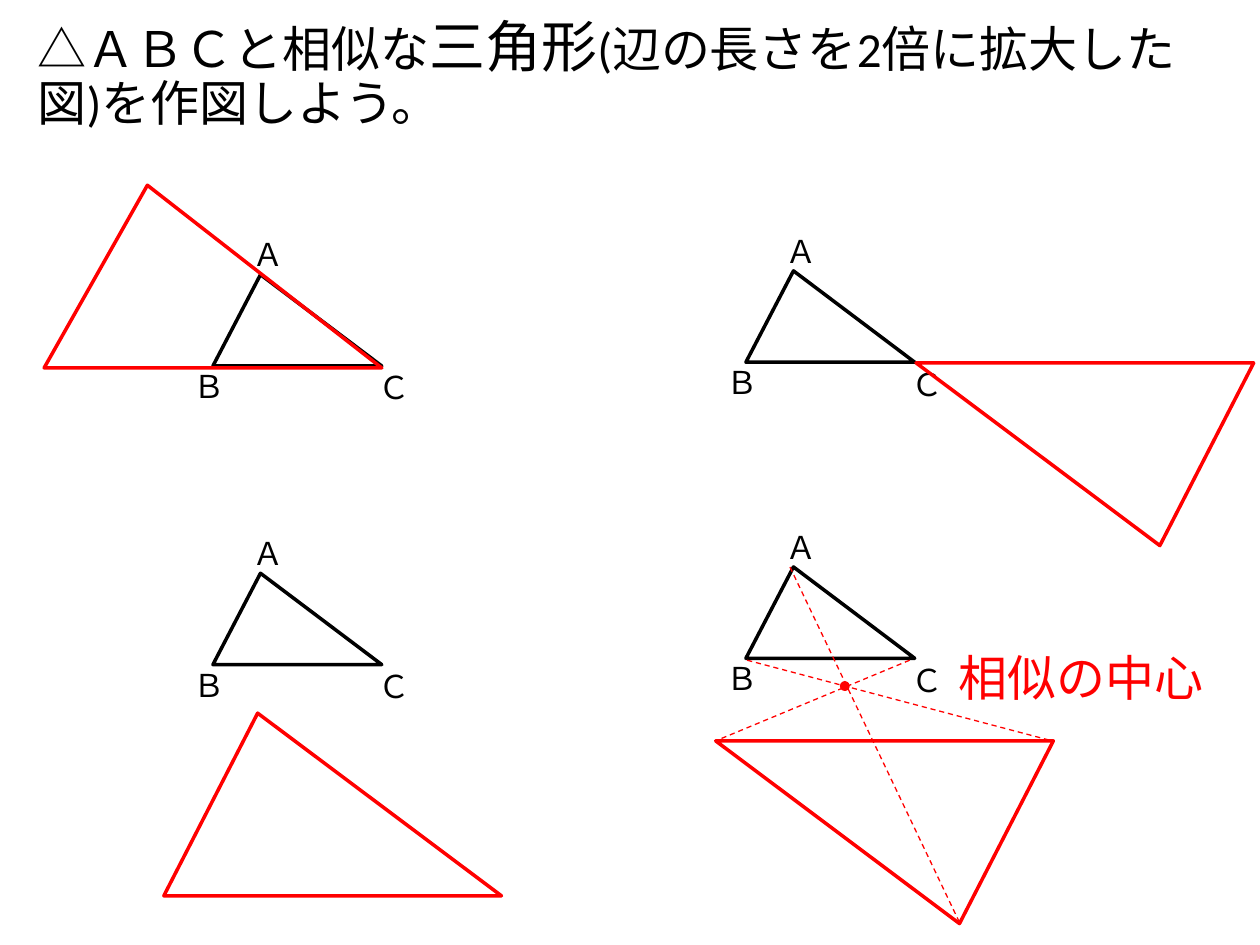
from pptx import Presentation
from pptx.dml.color import RGBColor as Rgb
from pptx.enum.dml import MSO_LINE_DASH_STYLE as Dash
from pptx.enum.shapes import MSO_CONNECTOR as Link, MSO_SHAPE as Kind
from pptx.enum.text import MSO_ANCHOR as Anchor, MSO_AUTO_SIZE as Fit
from pptx.util import Inches, Pt
from lxml.etree import SubElement

WIDE, HIGH = Inches(10), Inches(7.5)
COLS, ROWS = 100, 75
HUES = {"ink": "000000", "red": "FF0000"}
FONT = "Calibri"
NS = "{http://schemas.openxmlformats.org/drawingml/2006/main}"


def put(frame, runs, hue="ink", wrap=False, gap=None, anchor=Anchor.TOP):
    frame.word_wrap = wrap
    frame.auto_size = Fit.NONE if wrap else Fit.SHAPE_TO_FIT_TEXT
    frame.vertical_anchor = anchor
    para = frame.paragraphs[0]
    if gap:
        para.line_spacing = gap
    for words, size in runs:
        run = para.add_run()
        run.text = words
        run.font.name = FONT
        run.font.size = Pt(size)
        run.font.color.rgb = Rgb.from_string(HUES[hue])


class Board:
    def __init__(self, slide):
        self.slide = slide
        self.root = slide.shapes

    def grid(self, x, y):
        return round(WIDE * x / COLS), round(HIGH * y / ROWS)

    def text(self, x, y, w, h, runs, **form):
        box = self.root.add_textbox(*self.grid(x, y), *self.grid(w, h))
        put(box.text_frame, runs, **form)

    def pen(self, item, hue, width):
        item.line.color.rgb = Rgb.from_string(HUES[hue])
        item.line.width = Pt(width)

    def shape(self, kind, x, y, w, h, hue, fill=False):
        item = self.root.add_shape(kind, *self.grid(x, y), *self.grid(w, h))
        item.shadow.inherit = False
        if fill:
            item.fill.solid()
            item.fill.fore_color.rgb = Rgb.from_string(HUES[hue])
        else:
            item.fill.background()
        self.pen(item, hue, 2)
        return item

    def tri(self, x, y, scale=1, peak=0.282, hue="ink", turn=0):
        item = self.shape(Kind.ISOSCELES_TRIANGLE, x, y,
                          13.4 * scale, 7.25 * scale, hue)
        item.adjustments[0] = peak
        item.rotation = turn

    def named(self, x, y):
        self.root = self.slide.shapes.add_group_shape().shapes
        self.tri(x, y)
        for name, dx, dy in (("Ａ", 2.15, -3.6), ("Ｃ", 12.15, 6.95), ("Ｂ", -2.5, 6.85)):
            self.text(x + dx, y + dy, 3.9, 4, [(name, 18)])
        self.root = self.slide.shapes

    def dash(self, start, end):
        line = self.root.add_connector(Link.STRAIGHT, *self.grid(*start), *self.grid(*end))
        self.pen(line, "red", 0.75)
        line.line.dash_style = Dash.DASH
        SubElement(line._element.spPr, NS + "effectLst")


def main():
    deck = Presentation()
    deck.slide_width, deck.slide_height = WIDE, HIGH
    board = Board(deck.slides.add_slide(deck.slide_layouts[6]))

    board.text(2, 1.3, 96.1, 9.4, [
        ("△ＡＢＣと相似な", 28), ("三角形", 32),
        ("(辺の長さを2倍に拡大した図)を作図しよう。", 28),
    ], wrap=True, gap=0.9, anchor=Anchor.MIDDLE)

    for spot in ((16.9, 21.8), (16.9, 45.5), (59.2, 45), (59.2, 21.5)):
        board.named(*spot)

    for x, y, peak, turn in ((3.5, 14.7, 0.306, 0), (13, 56.6, 0.278, 0),
                             (72.7, 28.8, 0.278, 180), (56.8, 58.8, 0.278, 180)):
        board.tri(x, y, 2, peak, "red", turn)

    for start, end in (((72.2, 52.4), (56.8, 58.8)),
                       ((62.7, 45), (76.1, 73.1)),
                       ((59.3, 52.4), (83.5, 58.8))):
        board.dash(start, end)

    board.shape(Kind.FLOWCHART_CONNECTOR, 66.8, 54.2, 0.5, 0.5, "red", fill=True)
    board.text(75.1, 50.9, 21.7, 5.7, [("相似の中心", 28)], hue="red")
    deck.save("out.pptx")


if __name__ == "__main__":
    main()
